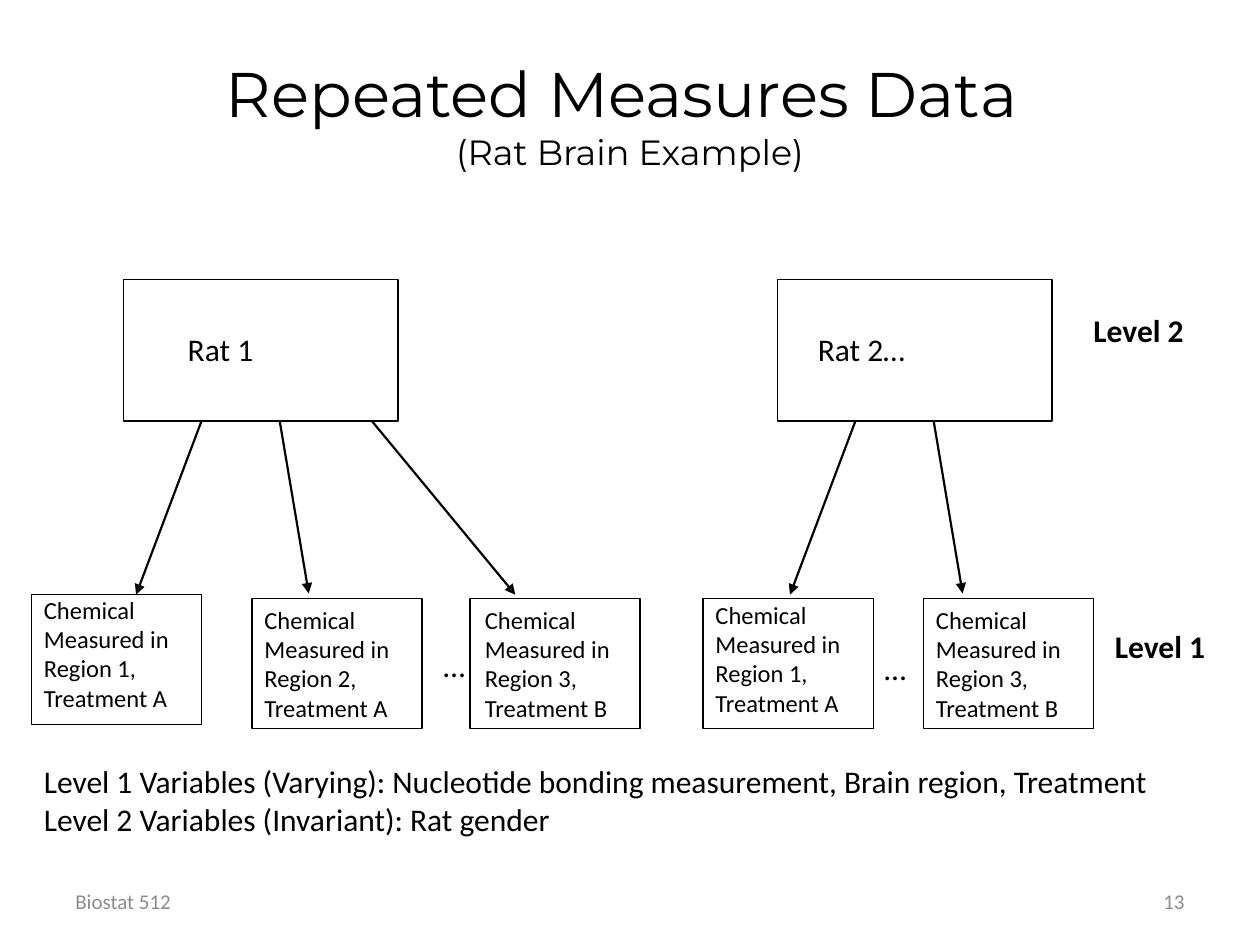
import pptx
import pptx.dml.color
import pptx.enum.shapes
import pptx.enum.text
import pptx.oxml
import pptx.oxml.ns
import pptx.util
from pptx.util import Inches

COLORS = {"ink": "000000", "muted": "8C8C8C"}
ALIGN = pptx.enum.text.PP_ALIGN
ANCHOR = pptx.enum.text.MSO_ANCHOR
BODY_FONT = "Calibri"
TITLE_FONT = "Montserrat"


def rgb(name):
    """Return the named palette colour."""
    return pptx.dml.color.RGBColor.from_string(COLORS[name])


def add_run(paragraph, text, size, color="ink", bold=False, font=BODY_FONT):
    """Append one formatted run to a paragraph."""
    run = paragraph.add_run()
    run.text = text
    run.font.name = font
    run.font.size = pptx.util.Pt(size)
    run.font.bold = bold
    run.font.color.rgb = rgb(color)


def add_label(slide, box, lines, size=18, color="ink", bold=False,
              align=ALIGN.LEFT, anchor=ANCHOR.TOP, wrap=True, indent=0.1):
    """Place a text box with one paragraph for each line."""
    frame = slide.shapes.add_textbox(*map(Inches, box)).text_frame
    frame.word_wrap = wrap
    frame.vertical_anchor = anchor
    frame.margin_left = Inches(indent)
    for index, line in enumerate(lines):
        paragraph = frame.add_paragraph() if index else frame.paragraphs[0]
        paragraph.alignment = align
        add_run(paragraph, line, size, color, bold)


def add_process(slide, box):
    """Place an unfilled process box with a thin outline."""
    process = slide.shapes.add_shape(
        pptx.enum.shapes.MSO_SHAPE.FLOWCHART_PROCESS, *map(Inches, box))
    process.shadow.inherit = False
    process.fill.background()
    process.line.color.rgb = rgb("ink")
    process.line.width = pptx.util.Pt(0.75)


def add_arrow(slide, start, end):
    """Draw a straight arrow between two points."""
    arrow = slide.shapes.add_connector(
        pptx.enum.shapes.MSO_CONNECTOR.STRAIGHT, *map(Inches, start + end))
    arrow.line.color.rgb = rgb("ink")
    arrow.line.width = pptx.util.Pt(1.25)
    head = pptx.oxml.parse_xml(
        f'<a:tailEnd {pptx.oxml.ns.nsdecls("a")} type="triangle" w="med" len="med"/>')
    arrow.line._get_or_add_ln().append(head)
    arrow._element.spPr.append(
        pptx.oxml.parse_xml(f'<a:effectLst {pptx.oxml.ns.nsdecls("a")}/>'))


def add_title(slide, box, heading, subtitle):
    """Fill the title placeholder with a heading and a smaller second line."""
    title = slide.shapes.title
    title.left, title.top, title.width, title.height = map(Inches, box)
    frame = title.text_frame
    frame.word_wrap = True
    frame.vertical_anchor = ANCHOR.MIDDLE
    paragraph = frame.paragraphs[0]
    paragraph.alignment = ALIGN.CENTER
    add_run(paragraph, heading, 36, font=TITLE_FONT)
    paragraph.add_line_break()
    add_run(paragraph, subtitle, 20, font=TITLE_FONT)


def add_rat(slide, box, name, name_indent, arrows):
    """Place a level 2 rat box, its name and the arrows to its measurements."""
    left, top, width, height = box
    add_process(slide, box)
    add_label(slide, (left, top + 0.35, width, 0.42), [name], indent=name_indent)
    for start, end, drop in arrows:
        add_arrow(slide, (left + start, top + height),
                  (left + end, top + height + drop))


def add_measurement(slide, box, region, treatment, shift=(0, 0)):
    """Place a level 1 box with the chemical measured in a region."""
    left, top, width, height = box
    add_process(slide, box)
    add_label(slide, (left + shift[0], top + shift[1], width + 0.07, height),
              ["Chemical", f"Measured in Region {region}, Treatment {treatment}"],
              size=14)


def add_footer(slide, box, course, number):
    """Place the course name and slide number at the two ends of the box."""
    left, top, width, height = box
    part = 2.33
    for offset, text, align in ((0, course, ALIGN.LEFT),
                                (width - part, number, ALIGN.RIGHT)):
        add_label(slide, (left + offset, top, part, height), [text], size=12,
                  color="muted", align=align, anchor=ANCHOR.MIDDLE)


def main():
    """Build and save the slide."""
    deck = pptx.Presentation()
    deck.slide_width, deck.slide_height = Inches(10), Inches(7.5)
    slide = deck.slides.add_slide(deck.slide_layouts[5])
    add_title(slide, (0.25, 0.25, 9.5, 1.3),
              "Repeated Measures Data ", "(Rat Brain Example)")

    shared_arrows = [(0.62, 0.1, 1.38), (1.24, 1.47, 1.37)]
    third_arrow = (1.97, 3.11, 1.38)
    add_rat(slide, (0.98, 2.22, 2.18, 1.12), "Rat 1", 0.51,
            shared_arrows + [third_arrow])
    add_rat(slide, (6.17, 2.22, 2.18, 1.12), "Rat 2…", 0.32, shared_arrows)

    measurements = [
        (0.25, 4.72, 1, "A", (0, -0.05)),
        (2, 4.75, 2, "A", (0, 0)),
        (3.73, 4.75, 3, "B", (0.02, 0)),
        (5.58, 4.75, 1, "A", (0, -0.04)),
        (7.33, 4.75, 3, "B", (0, 0)),
    ]
    for left, top, region, treatment, shift in measurements:
        add_measurement(slide, (left, top, 1.35, 1.03), region, treatment, shift)
    for left, top in ((3.42, 5.08), (6.92, 5.1)):
        add_label(slide, (left, top, 0.38, 0.4), ["…"], wrap=False)

    for left, top, level in ((8.58, 2.42, "Level 2"), (8.75, 4.93, "Level 1")):
        add_label(slide, (left, top, 1, 0.4), [level], bold=True)
    add_label(slide, (0.25, 6, 9.5, 0.71), [
        "Level 1 Variables (Varying): Nucleotide bonding measurement, "
        "Brain region, Treatment",
        "Level 2 Variables (Invariant): Rat gender",
    ])
    add_footer(slide, (0.5, 6.95, 9, 0.4), "Biostat 512", "13")
    deck.save("out.pptx")


if __name__ == "__main__":
    main()
